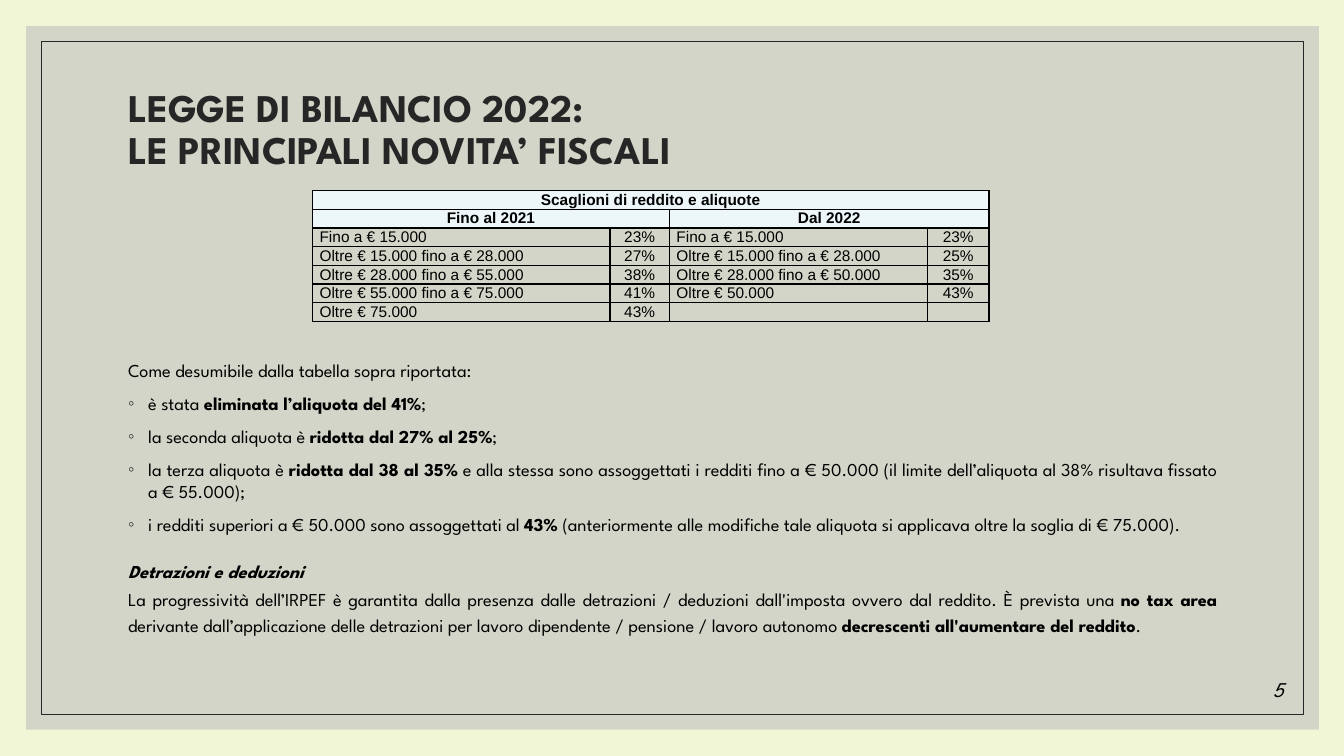
from dataclasses import dataclass

from pptx import Presentation
from pptx import oxml
from pptx import util as u
from pptx.dml import color
from pptx.enum import shapes, text
from pptx.oxml import ns


@dataclass(frozen=True)
class Theme:
    background: str = "F1F6D6"
    panel: str = "BFBFBF"
    dark: str = "262626"
    black: str = "000000"
    header: str = "EDF7F9"
    heading_font: str = "League Spartan"
    table_font: str = "Arial"
    title_size: int = 28
    body_size: int = 13
    table_size: int = 11
    number_size: int = 15


THEME = Theme()
ALIGN = text.PP_ALIGN

TITLE_LINES = "LEGGE DI BILANCIO 2022:\vLE PRINCIPALI NOVITA’ FISCALI"
COLUMN_WIDTHS = (2.95, 0.59, 2.56, 0.61)
ROW_HEIGHT = 1.3 / 7
TABLE_ROWS = (
    ("Scaglioni di reddito e aliquote", "", "", ""),
    ("Fino al 2021", "", "Dal 2022", ""),
    ("Fino a € 15.000", "23%", "Fino a € 15.000", "23%"),
    ("Oltre € 15.000 fino a € 28.000", "27%", "Oltre € 15.000 fino a € 28.000", "25%"),
    ("Oltre € 28.000 fino a € 55.000", "38%", "Oltre € 28.000 fino a € 50.000", "35%"),
    ("Oltre € 55.000 fino a € 75.000", "41%", "Oltre € 50.000", "43%"),
    ("Oltre € 75.000", "43%", "", ""),
)
HEADER_ROWS = 2
HEADER_SPANS = ((0, 0, 3), (1, 0, 1), (1, 2, 3))  # row, first column, last column

# Double asterisks enclose bold words
INTRO = "Come desumibile dalla tabella sopra riportata:"
BULLETS = (
    "è stata **eliminata l’aliquota del 41%**;",
    "la seconda aliquota è **ridotta dal 27% al 25%**;",
    "la terza aliquota è **ridotta dal 38 al 35%** e alla stessa sono assoggettati i redditi "
    "fino a € 50.000 (il limite dell’aliquota al 38% risultava fissato a € 55.000);",
    "i redditi superiori a € 50.000 sono assoggettati al **43%** (anteriormente alle modifiche "
    "tale aliquota si applicava oltre la soglia di € 75.000).",
)
SUBHEADING = "**Detrazioni e deduzioni**"
CLOSING = (
    "La progressività dell’IRPEF è garantita dalla presenza dalle detrazioni / deduzioni "
    "dall'imposta ovvero dal reddito. È prevista una **no tax area **derivante "
    "dall’applicazione delle detrazioni per lavoro dipendente / pensione / lavoro autonomo "
    "**decrescenti all'aumentare del reddito**."
)


def rgb(value):
    return color.RGBColor.from_string(value)


def place(shape, left, top, width, height):
    shape.left, shape.top = u.Inches(left), u.Inches(top)
    shape.width, shape.height = u.Inches(width), u.Inches(height)


def prepare_frame(shape):
    frame = shape.text_frame
    frame.word_wrap = True
    frame.auto_size = text.MSO_AUTO_SIZE.NONE
    frame.vertical_anchor = text.MSO_ANCHOR.TOP
    return frame


def style_font(font, name, size, tint, bold=False, italic=False):
    font.name, font.size = name, u.Pt(size)
    font.color.rgb = rgb(tint)
    font.bold, font.italic = bold, italic


def set_spacing(paragraph, line, before, after, align):
    paragraph.line_spacing = line
    paragraph.space_before, paragraph.space_after = u.Pt(before), u.Pt(after)
    paragraph.alignment = align


def set_bullet(paragraph, bulleted):
    properties = paragraph._p.get_or_add_pPr()
    indent = u.Inches(0.2) if bulleted else 0
    properties.set("marL", str(indent))
    properties.set("indent", str(-indent))
    if bulleted:
        tint = oxml.parse_xml(
            f'<a:buClr {ns.nsdecls("a")}><a:srgbClr val="{THEME.dark}"/></a:buClr>')
        mark = oxml.parse_xml(f'<a:buChar {ns.nsdecls("a")} char="◦"/>')
        properties.extend((tint, mark))
    else:
        properties.append(oxml.parse_xml(f'<a:buNone {ns.nsdecls("a")}/>'))


def add_rectangle(slide, left, top, width, height):
    shape = slide.shapes.add_shape(
        shapes.MSO_SHAPE.RECTANGLE, *map(u.Inches, (left, top, width, height)))
    shape.shadow.inherit = False
    return shape


def add_frame(slide):
    panel = add_rectangle(slide, 0.26, 0.26, 12.82, 6.98)
    panel.fill.solid()
    panel.fill.fore_color.rgb = rgb(THEME.panel)
    panel.line.fill.background()
    tint = panel.fill._xPr.find(".//" + ns.qn("a:srgbClr"))
    tint.append(oxml.parse_xml(f'<a:alpha {ns.nsdecls("a")} val="60000"/>'))

    border = add_rectangle(slide, 0.41, 0.41, 12.52, 6.68)
    border.fill.background()
    border.line.color.rgb = rgb(THEME.dark)
    border.line.width = u.Pt(0.5)


def fill_title(title):
    place(title, 1.17, 0.83, 11, 1.5)
    paragraph = prepare_frame(title).paragraphs[0]
    paragraph.text = TITLE_LINES
    set_spacing(paragraph, 0.9, 0, 0, ALIGN.LEFT)
    style_font(paragraph.font, THEME.heading_font, THEME.title_size, THEME.dark, bold=True)


def add_body_paragraph(paragraph, marked_text, spacing, bulleted=False, italic=False):
    set_bullet(paragraph, bulleted)
    set_spacing(paragraph, *spacing)
    style_font(paragraph.font, THEME.heading_font, THEME.body_size, THEME.black, italic=italic)
    for index, part in enumerate(marked_text.split("**")):
        if part:
            run = paragraph.add_run()
            run.text = part
            if index % 2:
                run.font.bold = True


def fill_body(body):
    place(body, 1.17, 3.47, 11, 3.04)
    frame = prepare_frame(body)
    add_body_paragraph(frame.paragraphs[0], INTRO, (1.2, 5.7, 6, ALIGN.LEFT))
    for bullet in BULLETS:
        add_body_paragraph(frame.add_paragraph(), bullet, (1.0, 2, 6, ALIGN.JUSTIFY), bulleted=True)
    add_body_paragraph(frame.add_paragraph(), SUBHEADING, (1.2, 8.5, 1.4, ALIGN.JUSTIFY), italic=True)
    add_body_paragraph(frame.add_paragraph(), CLOSING, (1.2, 0, 1.4, ALIGN.JUSTIFY))


def format_cell(cell, content, is_header, is_rate):
    cell.margin_left = cell.margin_right = u.Inches(0.07)
    cell.margin_top = cell.margin_bottom = 0
    cell.vertical_anchor = text.MSO_ANCHOR.MIDDLE
    paragraph = cell.text_frame.paragraphs[0]
    paragraph.text = content
    set_spacing(paragraph, 1.0, 0, 0, ALIGN.CENTER if is_header or is_rate else ALIGN.JUSTIFY)
    style_font(paragraph.font, THEME.table_font, THEME.table_size, THEME.black, bold=is_header)
    for side in "LRTB":
        cell._tc.get_or_add_tcPr().append(oxml.parse_xml(
            f'<a:ln{side} {ns.nsdecls("a")} w="{u.Pt(1)}"><a:solidFill>'
            f'<a:srgbClr val="{THEME.black}"/></a:solidFill></a:ln{side}>'))
    if is_header:
        cell.fill.solid()
        cell.fill.fore_color.rgb = rgb(THEME.header)
    else:
        cell.fill.background()


def add_rate_table(slide):
    size = (sum(COLUMN_WIDTHS), ROW_HEIGHT * len(TABLE_ROWS))
    table = slide.shapes.add_table(
        len(TABLE_ROWS), len(COLUMN_WIDTHS), *map(u.Inches, (3.1, 1.89, *size))).table
    table.first_row = table.horz_banding = False
    for column, width in zip(table.columns, COLUMN_WIDTHS):
        column.width = u.Inches(width)
    for row_index, row in enumerate(TABLE_ROWS):
        table.rows[row_index].height = u.Inches(ROW_HEIGHT)
        for column_index, content in enumerate(row):
            format_cell(table.cell(row_index, column_index), content,
                        row_index < HEADER_ROWS, column_index % 2 == 1)
    for row_index, first, last in HEADER_SPANS:
        table.cell(row_index, first).merge(table.cell(row_index, last))


def add_page_number(slide, number):
    box = slide.shapes.add_textbox(*map(u.Inches, (4.28, 6.64, 8.55, 0.61)))
    paragraph = prepare_frame(box).paragraphs[0]
    paragraph.text = number
    set_spacing(paragraph, 1.1, 9, 6, ALIGN.RIGHT)
    style_font(paragraph.font, THEME.heading_font, THEME.number_size, THEME.black, italic=True)


def main():
    presentation = Presentation()
    presentation.slide_width, presentation.slide_height = u.Inches(13.33), u.Inches(7.5)
    slide = presentation.slides.add_slide(presentation.slide_layouts[1])
    slide.background.fill.solid()
    slide.background.fill.fore_color.rgb = rgb(THEME.background)
    title, body = slide.placeholders

    # Panel and border, moved behind the placeholders
    add_frame(slide)
    for placeholder in (title, body):
        slide.shapes._spTree.append(placeholder._element)

    # Content
    fill_title(title)
    fill_body(body)
    add_rate_table(slide)
    add_page_number(slide, "5")
    presentation.save("out.pptx")


if __name__ == "__main__":
    main()
